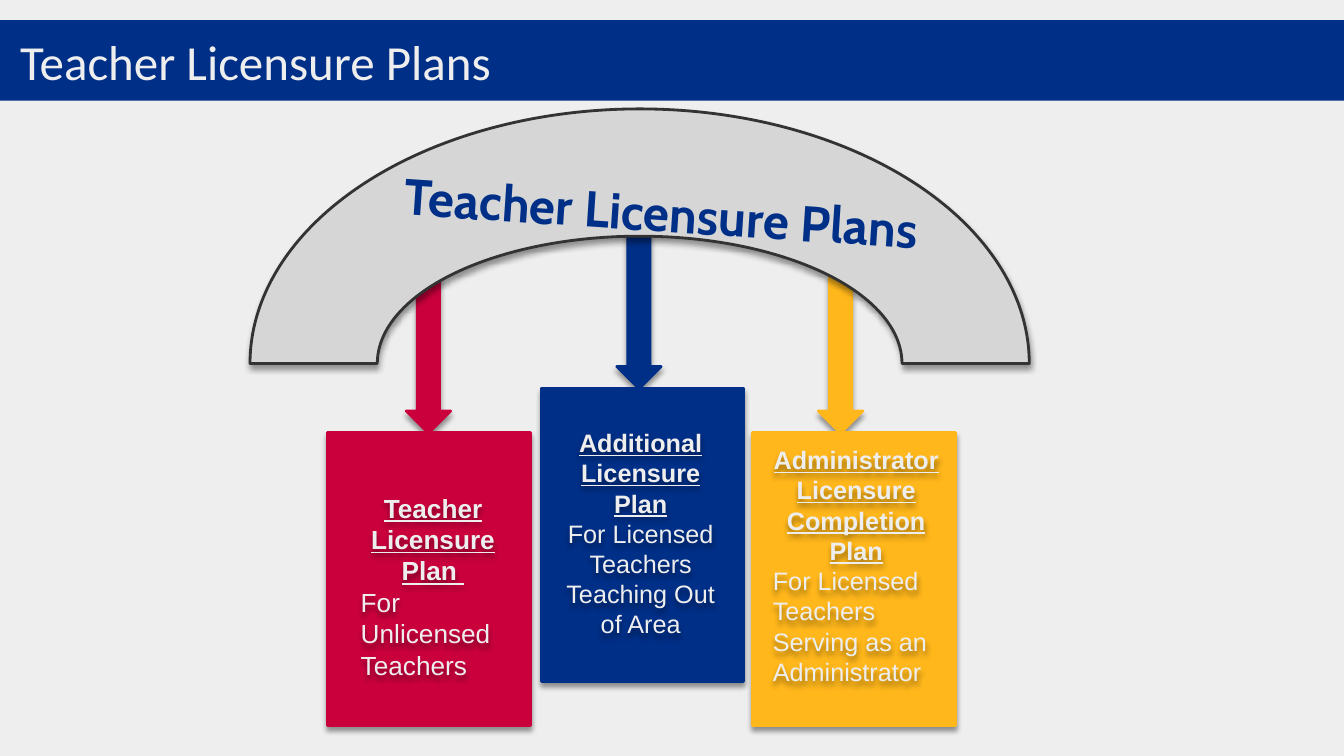
from lxml import etree
from pptx import Presentation
from pptx.dml.color import RGBColor
from pptx.enum import shapes, text
from pptx.oxml import ns
from pptx.util import Pt

COLORS = {
    "background": "EEEEEE", "light": "EEEEEE", "blue": "002F87", "red": "CA003D",
    "gold": "FFB71B", "arc": "D6D6D6", "arc line": "333333", "shadow": "000000",
}
TITLE = "Teacher Licensure Plans"
LEFT, CENTER = text.PP_ALIGN.LEFT, text.PP_ALIGN.CENTER

# Panel and label boxes are left, top; labels add width and height.
PLANS = [
    {"color": "red", "panel": (234, 308.9), "arrow_left": 290.2,
     "label": (250.6, 347.8, 117.4, 143.3), "size": 18.7, "align": LEFT,
     "name": "Teacher Licensure Plan ", "audience": "For Unlicensed Teachers"},
    {"color": "blue", "panel": (386.6, 277.2), "arrow_left": 440.6,
     "label": (391, 301.7, 133.2, 159.8), "size": 18, "align": CENTER,
     "name": "Additional Licensure Plan",
     "audience": "For Licensed Teachers Teaching Out of Area"},
    {"color": "gold", "panel": (537.8, 308.9), "arrow_left": 584.6,
     "label": (545, 313.9, 133.2, 187.9), "size": 18, "align": LEFT,
     "name": "Administrator Licensure Completion Plan",
     "audience": "For Licensed Teachers Serving as an Administrator"},
]
PANEL_SIZE = (144.7, 209.5)
ARROW_SIZE = (31.7, 113)
ARROW_RISE = 112.5
BAND = (0, 14.4, 960, 57.6)
TITLE_BOX = (0, 14.4, 864, 57.6)
ARC = (178.6, 77.8, 556.6, 363.6)
ARC_TEXT = (277.3, 126, 390, 50.4)
ARC_TEXT_ANGLE = 3.8


def rgb(name):
    return RGBColor.from_string(COLORS[name])


def points(values):
    return [Pt(value) for value in values]


def add_soft_shadow(shape):
    properties = shape._element.spPr
    for effects in properties.findall(ns.qn("a:effectLst")):
        properties.remove(effects)
    effects = etree.SubElement(properties, ns.qn("a:effectLst"))
    shadow = etree.SubElement(
        effects, ns.qn("a:outerShdw"), blurRad=str(Pt(4)), dist=str(Pt(3)),
        dir="5400000", rotWithShape="0")
    color = etree.SubElement(shadow, ns.qn("a:srgbClr"), val=COLORS["shadow"])
    etree.SubElement(color, ns.qn("a:alpha"), val="40000")


def add_figure(slide, kind, box, fill, line=None):
    """Add a filled shape; one with a line also casts a shadow."""
    shape = slide.shapes.add_shape(kind, *points(box))
    shape.shadow.inherit = False
    shape.fill.solid()
    shape.fill.fore_color.rgb = rgb(fill)
    if line:
        shape.line.color.rgb = rgb(line)
        shape.line.width = Pt(2)
        add_soft_shadow(shape)
    else:
        shape.line.fill.background()
    return shape


def write(paragraph, content, color, align, **font):
    paragraph.alignment = align
    run = paragraph.add_run()
    run.text = content
    run.font.color.rgb = rgb(color)
    for attribute, value in font.items():
        setattr(run.font, attribute, value)


def add_title(slide):
    band = add_figure(slide, shapes.MSO_SHAPE.RECTANGLE, BAND, "blue")
    title = slide.shapes.title
    title._element.addprevious(band._element)
    title.left, title.top, title.width, title.height = points(TITLE_BOX)
    frame = title.text_frame
    settings = {
        "margin_left": Pt(14.4), "margin_right": Pt(14.4),
        "margin_top": Pt(7.2), "margin_bottom": Pt(7.2), "word_wrap": True,
        "vertical_anchor": text.MSO_ANCHOR.MIDDLE,
        "auto_size": text.MSO_AUTO_SIZE.NONE,
    }
    for attribute, value in settings.items():
        setattr(frame, attribute, value)
    write(frame.paragraphs[0], TITLE, "light", LEFT, size=Pt(35), name="Calibri")


def add_arc(slide):
    add_figure(slide, shapes.MSO_SHAPE.BLOCK_ARC, ARC, "arc", "arc line")
    box = slide.shapes.add_textbox(*points(ARC_TEXT))
    box.rotation = ARC_TEXT_ANGLE
    box.text_frame.word_wrap = False
    box.text_frame.vertical_anchor = text.MSO_ANCHOR.MIDDLE
    write(box.text_frame.paragraphs[0], TITLE, "blue", CENTER,
          size=Pt(36), name="Cabin", bold=True)


def add_arrow(slide, plan):
    top = plan["panel"][1] - ARROW_RISE
    add_figure(slide, shapes.MSO_SHAPE.DOWN_ARROW,
               (plan["arrow_left"], top, *ARROW_SIZE), plan["color"], plan["color"])


def add_label(slide, plan):
    box = slide.shapes.add_textbox(*points(plan["label"]))
    add_soft_shadow(box)
    frame = box.text_frame
    frame.word_wrap = True
    font = {"size": Pt(plan["size"]), "name": "Arial"}
    write(frame.paragraphs[0], plan["name"], "light", CENTER,
          bold=True, underline=True, **font)
    write(frame.add_paragraph(), plan["audience"], "light", plan["align"], **font)
    for paragraph in frame.paragraphs:
        paragraph.line_spacing = Pt(plan["size"] * 1.2)


def main():
    presentation = Presentation()
    presentation.slide_width, presentation.slide_height = Pt(960), Pt(540)
    slide = presentation.slides.add_slide(presentation.slide_layouts[5])
    slide.background.fill.solid()
    slide.background.fill.fore_color.rgb = rgb("background")

    add_title(slide)
    for plan in PLANS:
        add_arrow(slide, plan)
    add_arc(slide)
    for plan in PLANS:
        add_figure(slide, shapes.MSO_SHAPE.RECTANGLE, (*plan["panel"], *PANEL_SIZE),
                   plan["color"], plan["color"])
        add_label(slide, plan)
    presentation.save("out.pptx")


if __name__ == "__main__":
    main()
